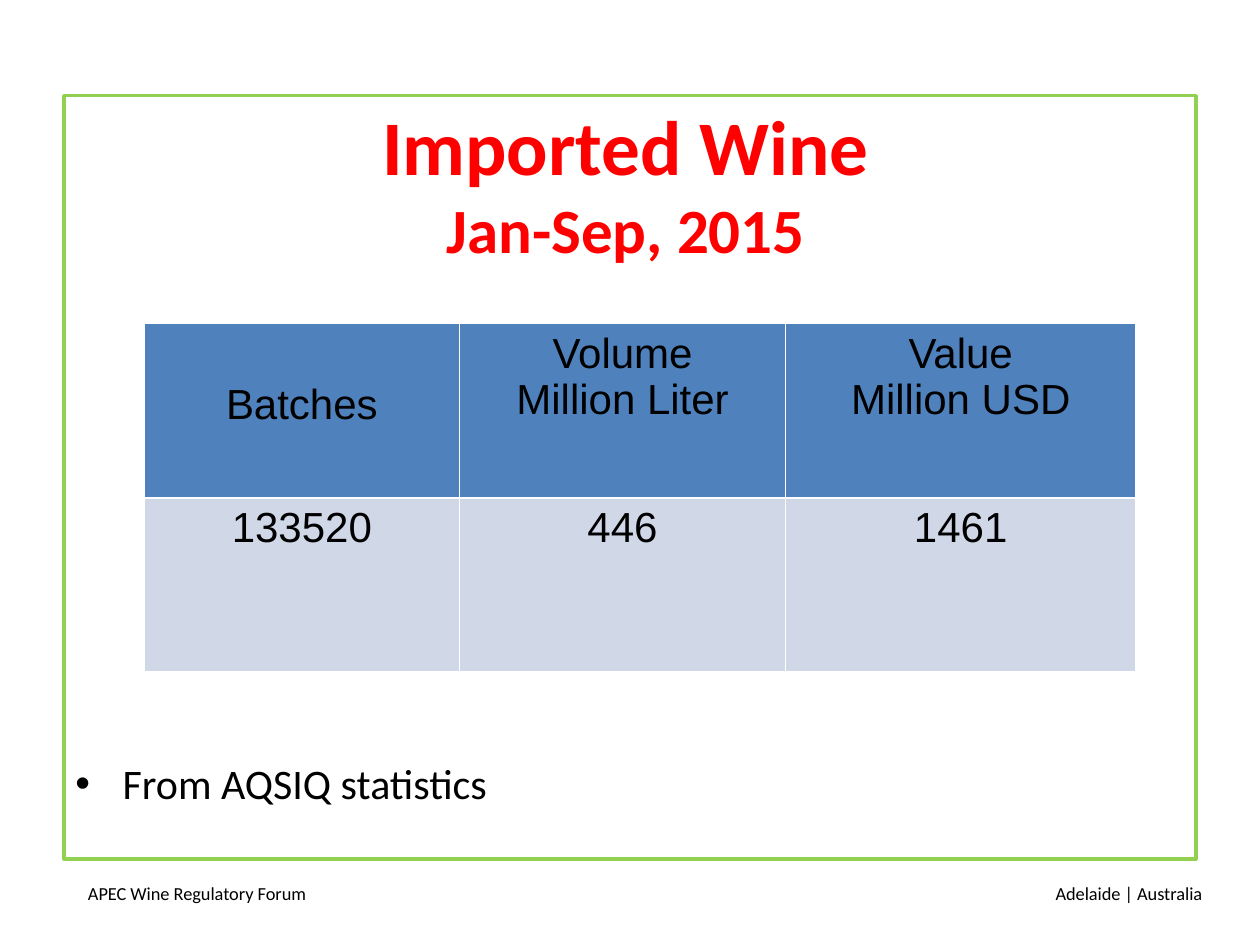
import pptx
import pptx.util
import pptx.dml.color
import pptx.enum.shapes
import pptx.enum.text
import pptx.oxml.ns
from lxml import etree

Pt = pptx.util.Pt
ALIGN = pptx.enum.text.PP_ALIGN
ANCHOR = pptx.enum.text.MSO_ANCHOR
COLORS = {
    "text": "000000",
    "title": "FF0000",
    "frame": "92D050",
    "header": "4F81BD",
    "body": "D0D8E8",
    "border": "FFFFFF",
}


def rgb(name):
    return pptx.dml.color.RGBColor.from_string(COLORS[name])


def set_font(font, size, name="Calibri", color="text", bold=False):
    font.size, font.name, font.bold = Pt(size), name, bold
    font.color.rgb = rgb(color)


def add_child(parent, tag, **attrs):
    return etree.SubElement(parent, pptx.oxml.ns.qn(tag), attrs)


def add_text_box(slide, x, y, w, h):
    tf = slide.shapes.add_textbox(Pt(x), Pt(y), Pt(w), Pt(h)).text_frame
    tf.word_wrap = True
    return tf


def add_frame(slide, x, y, w, h):
    sp = slide.shapes.add_shape(pptx.enum.shapes.MSO_SHAPE.RECTANGLE,
                                Pt(x), Pt(y), Pt(w), Pt(h))
    sp.shadow.inherit = False
    sp.fill.background()
    sp.line.color.rgb = rgb("frame")
    sp.line.width = Pt(2)


def add_footer(slide, x, y, w, h):
    box_w = 169
    for text, left, align in (
        ("APEC Wine Regulatory Forum", x, ALIGN.LEFT),
        ("Adelaide | Australia", x + w - box_w, ALIGN.RIGHT),
    ):
        p = add_text_box(slide, left, y, box_w, h).paragraphs[0]
        p.text, p.alignment = text, align
        set_font(p.font, 10.5)


def add_title(slide, x, y, w, h):
    tf = add_text_box(slide, x, y, w, h)
    tf.vertical_anchor = ANCHOR.MIDDLE
    p = tf.paragraphs[0]
    p.alignment = ALIGN.CENTER
    for i, (text, size) in enumerate((("Imported Wine", 44.1), ("Jan-Sep, 2015", 36))):
        if i:
            p.add_line_break()
        r = p.add_run()
        r.text = text
        set_font(r.font, size, color="title", bold=True)


def add_cell_borders(cell):
    tc_pr = cell._tc.get_or_add_tcPr()
    for side in ("a:lnL", "a:lnR", "a:lnT", "a:lnB"):
        ln = add_child(tc_pr, side, w=str(Pt(1)))
        add_child(add_child(ln, "a:solidFill"), "a:srgbClr", val=COLORS["border"])


def add_wine_table(slide, x, y, w, h):
    rows = (("Batches", "Volume\nMillion Liter", "Value\nMillion USD"),
            ("133520", "446", "1461"))
    col_widths = (180, 186.5, 200)
    table = slide.shapes.add_table(len(rows), len(col_widths),
                                   Pt(x), Pt(y), Pt(w), Pt(h)).table
    for column, width in zip(table.columns, col_widths):
        column.width = Pt(width)
    for i, (texts, fill) in enumerate(zip(rows, ("header", "body"))):
        table.rows[i].height = Pt(h / len(rows))
        for j, text in enumerate(texts):
            cell = table.cell(i, j)
            add_cell_borders(cell)
            cell.fill.solid()
            cell.fill.fore_color.rgb = rgb(fill)
            cell.text = text
            for p in cell.text_frame.paragraphs:
                p.alignment = ALIGN.CENTER
                set_font(p.font, 24, name="Arial")
    # The single-line heading sits one line lower
    table.cell(0, 0).margin_top = Pt(33)


def add_source_note(slide, x, y, w, h):
    p = add_text_box(slide, x, y, w, h).paragraphs[0]
    p.text = "From AQSIQ statistics"
    p_pr = p._p.get_or_add_pPr()
    p_pr.set("marL", str(Pt(27)))
    p_pr.set("indent", str(-Pt(27)))
    add_child(p_pr, "a:buFont", typeface="Arial")
    add_child(p_pr, "a:buChar", char="•")
    set_font(p.font, 24)


def main():
    prs = pptx.Presentation()
    prs.slide_width, prs.slide_height = Pt(720), Pt(540)
    slide = prs.slides.add_slide(prs.slide_layouts[6])

    # Frame and footer
    add_frame(slide, 36.7, 54.7, 646.6, 436.3)
    add_footer(slide, 43.2, 500.4, 651, 28.8)

    # Content
    add_title(slide, 33.6, 50, 648, 108)
    add_wine_table(slide, 82.5, 185, 566.5, 199)
    add_source_note(slide, 36, 429.5, 648, 40)

    prs.save("out.pptx")


if __name__ == "__main__":
    main()
